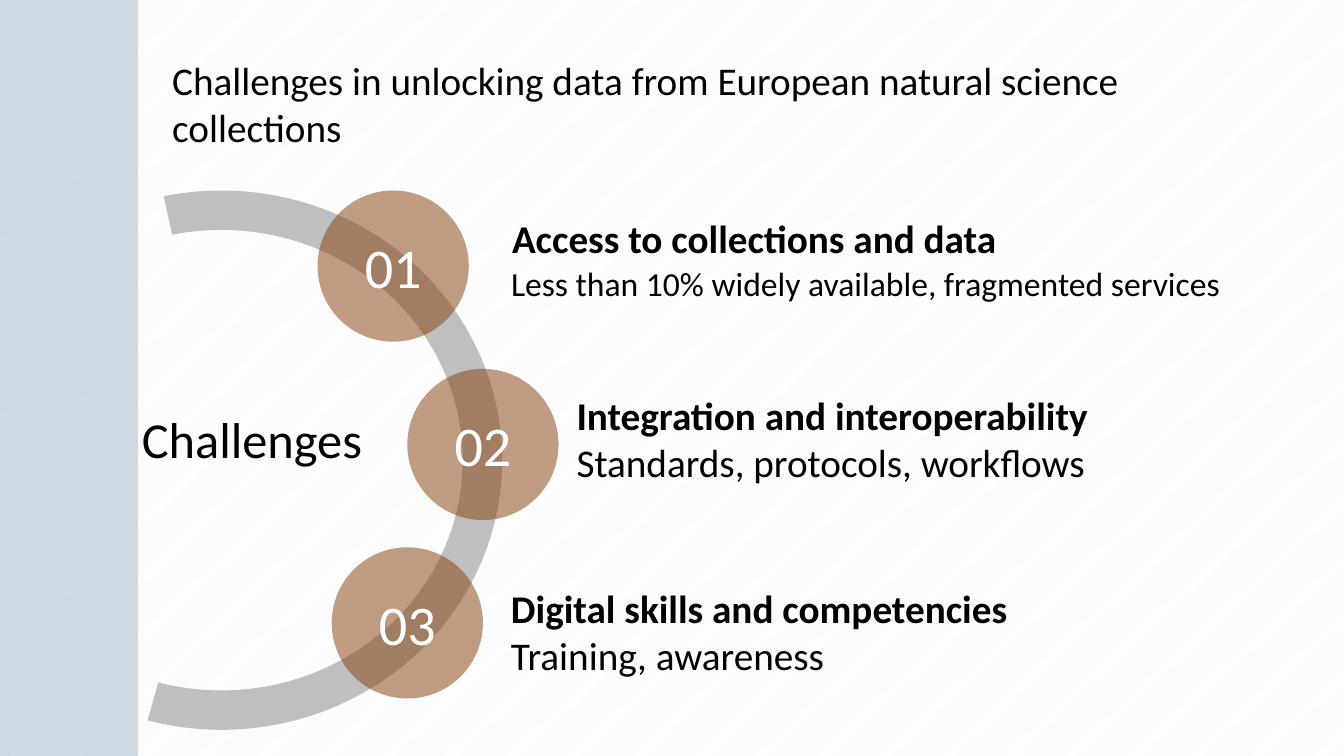
from lxml import etree
from pptx import Presentation
from pptx.dml.color import RGBColor
from pptx.enum.dml import MSO_PATTERN
from pptx.enum.shapes import MSO_SHAPE
from pptx.enum.text import MSO_ANCHOR, PP_ALIGN
from pptx.oxml.ns import qn
from pptx.util import Pt

PX = 9144  # EMU per px, 100 px to the inch
RECT, OVAL, ARC = MSO_SHAPE.RECTANGLE, MSO_SHAPE.OVAL, MSO_SHAPE.BLOCK_ARC
STRIPES = MSO_PATTERN.LIGHT_UPWARD_DIAGONAL
LEFT, CENTER, RIGHT = PP_ALIGN.LEFT, PP_ALIGN.CENTER, PP_ALIGN.RIGHT
MIDDLE = MSO_ANCHOR.MIDDLE
BLACK, WHITE, NAVY, BROWN, GREY = "000000", "FFFFFF", "1F4E79", "843C0B", "BFBFBF"


def rgb(color):
    return RGBColor.from_string(color)


class Deck:
    font = "Calibri"

    def __init__(self, width, height):
        self.prs = Presentation()
        self.prs.slide_width, self.prs.slide_height = width * PX, height * PX
        self.slide = self.prs.slides.add_slide(self.prs.slide_layouts[6])

    def background(self, pattern, fore, back):
        fill = self.slide.background.fill
        fill.patterned()
        fill.pattern = pattern
        fill.fore_color.rgb, fill.back_color.rgb = rgb(fore), rgb(back)

    def shape(self, kind, box, color, opacity=100):
        s = self.slide.shapes.add_shape(kind, *(v * PX for v in box))
        s.shadow.inherit = False
        s.fill.solid()
        s.fill.fore_color.rgb = rgb(color)
        s.line.fill.background()
        if opacity < 100:
            clr = s._element.spPr.find(qn("a:solidFill")).find(qn("a:srgbClr"))
            etree.SubElement(clr, qn("a:alpha")).set("val", str(opacity * 1000))
        return s

    def set_lines(self, tf, lines, size, color, align):
        tf.word_wrap = True
        tf.text = "\n".join(text for text, _ in lines)
        for p, (_, bold) in zip(tf.paragraphs, lines):
            p.alignment = align
            for r in p.runs:
                r.font.name, r.font.size = self.font, Pt(size)
                r.font.bold, r.font.color.rgb = bold, rgb(color)

    def text(self, box, lines, size, align=LEFT):
        tb = self.slide.shapes.add_textbox(*(v * PX for v in box))
        self.set_lines(tb.text_frame, lines, size, BLACK, align)

    def badge(self, x, y, label):
        s = self.shape(OVAL, (x, y, 150, 150), BROWN, 50)
        s.text_frame.vertical_anchor = MIDDLE
        self.set_lines(s.text_frame, [(label, False)], 40, WHITE, CENTER)


def main():
    deck = Deck(1333, 750)

    # Striped background and side band
    deck.background(STRIPES, "F2F2F2", WHITE)
    deck.shape(RECT, (0, 0, 137, 750), NAVY, 20)

    # Half ring
    ring = deck.shape(ARC, (-48, 178, 535, 557), GREY)
    ring.rotation = 90
    for i, value in enumerate((100.615, 9.487, 0.073)):
        ring.adjustments[i] = value

    # Numbered circles, evenly stepped down the ring
    for i, x in enumerate((315, 404, 329)):
        deck.badge(x, 189 + 177 * i, f"{i + 1:02d}")

    # Challenge descriptions
    deck.text((497, 256, 761, 50),
              [("Less than 10% widely available, fragmented services", False)], 24)
    deck.text((562, 383, 763, 104),
              [("Integration and interoperability", True),
               ("Standards, protocols, workflows", False)], 28)
    deck.text((497, 575, 813, 151),
              [("Digital skills and competencies", True),
               ("Training, awareness", False)], 28)
    deck.text((498, 208, 761, 57), [("Access to collections and data", True)], 28)

    # Ring label and title
    deck.text((128, 400, 241, 71), [("Challenges", False)], 36, RIGHT)
    deck.text((161, 51, 1133, 104),
              [("Challenges in unlocking data from European natural science collections",
                False)], 28)

    deck.prs.save("out.pptx")


if __name__ == "__main__":
    main()
